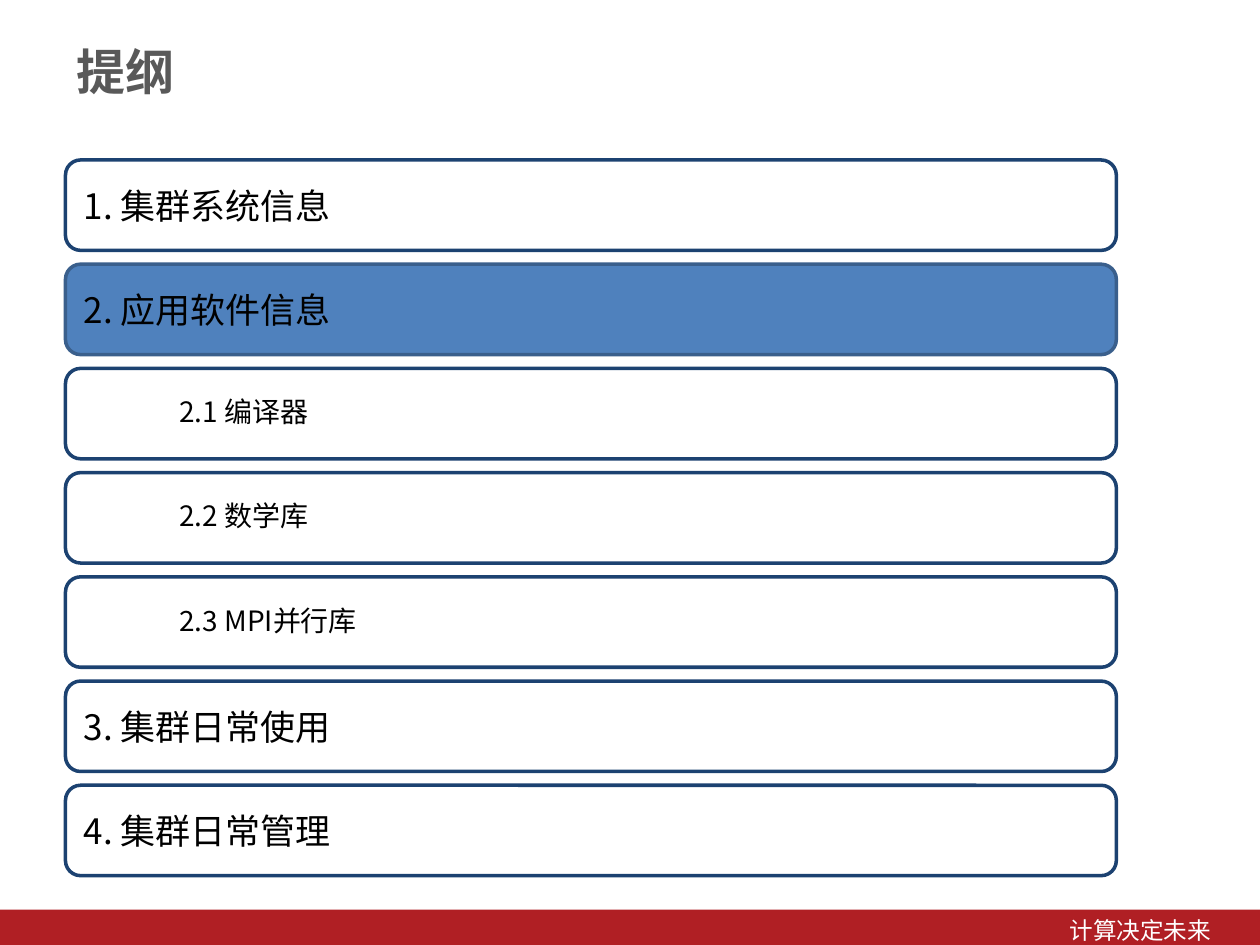
from lxml import etree
from pptx import Presentation
from pptx.dml.color import RGBColor
from pptx.enum.shapes import MSO_SHAPE
from pptx.enum.text import MSO_ANCHOR, PP_ALIGN
from pptx.oxml.ns import qn
from pptx.util import Inches, Pt

RECTANGLE = MSO_SHAPE.RECTANGLE
ROUNDED = MSO_SHAPE.ROUNDED_RECTANGLE
TOP, MIDDLE = MSO_ANCHOR.TOP, MSO_ANCHOR.MIDDLE
LEFT, RIGHT = PP_ALIGN.LEFT, PP_ALIGN.RIGHT

FONT = "Noto Sans CJK SC"
COLORS = {
    "white": "FFFFFF",
    "black": "000000",
    "title": "595959",
    "footer": "B01F24",
    "outline": "1C4271",
    "active": "4F81BD",
    "active_outline": "3A5F8C",
}

# (text, is a subsection, is the current section)
SECTIONS = [
    ("1. 集群系统信息", False, False),
    ("2. 应用软件信息", False, True),
    ("2.1 编译器", True, False),
    ("2.2 数学库", True, False),
    ("2.3 MPI并行库", True, False),
    ("3. 集群日常使用", False, False),
    ("4. 集群日常管理", False, False),
]


def color(name):
    return RGBColor.from_string(COLORS[name])


def set_format(target, values):
    for name, value in values.items():
        setattr(target, name, value)


def write_text(shape, text, size, ink, frame_format, para_format, bold=False):
    frame = shape.text_frame
    set_format(frame, {"word_wrap": True, **frame_format})
    para = frame.paragraphs[0]
    set_format(para, para_format)
    span = para.add_run()
    span.text = text
    set_format(span.font, {"name": FONT, "size": Pt(size), "bold": bold})
    span.font.color.rgb = color(ink)
    east_asian = etree.SubElement(span.font._element, qn("a:ea"))
    east_asian.set("typeface", FONT)


def add_panel(page, kind, box, fill, outline=None):
    panel = page.shapes.add_shape(kind, *map(Inches, box))
    panel.shadow.inherit = False
    panel.fill.solid()
    panel.fill.fore_color.rgb = color(fill)
    if outline:
        panel.line.color.rgb = color(outline)
        panel.line.width = Pt(2)
    else:
        panel.line.fill.background()
    return panel


def add_footer(page, box):
    left, top, width, height = box
    add_panel(page, RECTANGLE, box, "footer")
    motto = page.shapes.add_textbox(
        *map(Inches, (left + width - 2.18, top + 0.02, 1.85, height)))
    insets = {"margin_left": Inches(0.06), "margin_right": Inches(0.06),
              "margin_top": Inches(0.03), "margin_bottom": Inches(0.03)}
    write_text(motto, "计算决定未来", 13.5, "white", insets, {"alignment": RIGHT})


def add_title(page, box):
    title = page.shapes.add_textbox(*map(Inches, box))
    write_text(title, "提纲", 28, "title", {"vertical_anchor": TOP},
               {"alignment": LEFT}, bold=True)


def add_outline(page, box, gap=0.11):
    left, top, width, height = box
    row_height = (height + gap) / len(SECTIONS) - gap
    for index, (text, is_sub, is_current) in enumerate(SECTIONS):
        row_box = (left, top + index * (row_height + gap), width, row_height)
        fill, outline = (("active", "active_outline") if is_current
                         else ("white", "outline"))
        row = add_panel(page, ROUNDED, row_box, fill, outline)
        frame_format = {
            "vertical_anchor": MIDDLE,
            "margin_left": Inches(0.87 if is_sub else 0.11),
            "margin_right": Inches(0.11),
        }
        para_format = {"alignment": LEFT, "line_spacing": 0.9 if is_sub else 1.0}
        write_text(row, text, 16 if is_sub else 20, "black",
                   frame_format, para_format)


def main():
    deck = Presentation()
    deck.slide_width, deck.slide_height = Inches(10), Inches(7.5)
    page = deck.slides.add_slide(deck.slide_layouts[6])
    add_footer(page, (0, 7.22, 10, 0.29))
    add_title(page, (0.51, 0.28, 7.21, 0.62))
    add_outline(page, (0.52, 1.27, 8.34, 5.68))
    deck.save("out.pptx")


if __name__ == "__main__":
    main()
